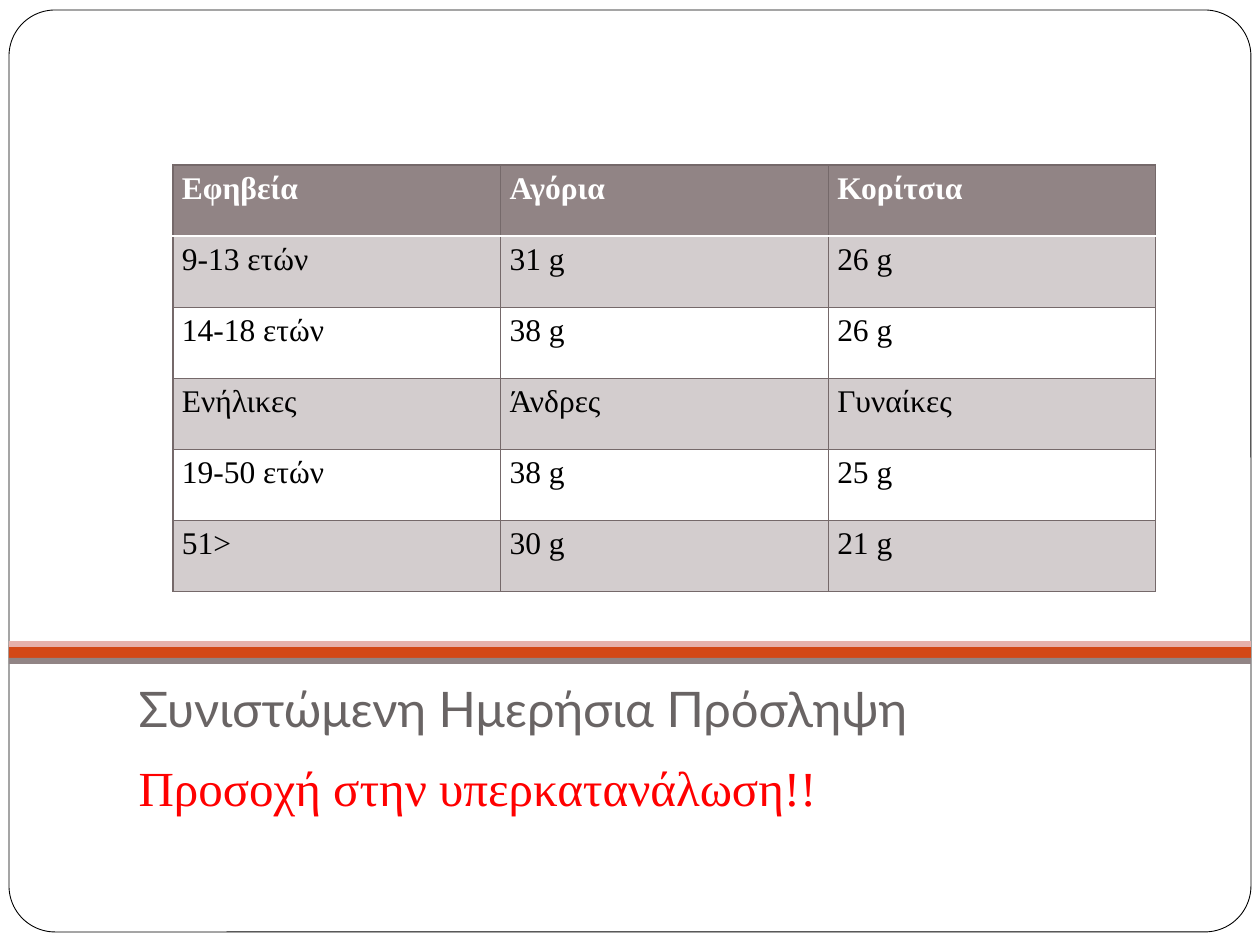
from lxml.etree import SubElement
from pptx import Presentation
from pptx.dml.color import RGBColor
from pptx.enum.shapes import MSO_SHAPE as Shape
from pptx.enum.text import MSO_ANCHOR as Anchor, MSO_AUTO_SIZE as AutoSize, PP_ALIGN as Align
from pptx.oxml import parse_xml
from pptx.oxml.ns import nsdecls, qn
from pptx.util import Pt

EMU_PER_PX = 914400 / 126
SERIF = "Times New Roman"
TAUPE = "918485"
GRID = "75696A"
INTAKE = [
    ("Εφηβεία", "Αγόρια", "Κορίτσια"),
    ("9-13 ετών", "31 g", "26 g"),
    ("14-18 ετών", "38 g", "26 g"),
    ("Ενήλικες", "Άνδρες", "Γυναίκες"),
    ("19-50 ετών", "38 g", "25 g"),
    ("51>", "30 g", "21 g"),
]


def px(length):
    """Turn pixels into EMU."""
    return round(length * EMU_PER_PX)


def color(hex_code):
    """Turn a hex string into a colour."""
    return RGBColor.from_string(hex_code)


def style_text(paragraph, size, font_name, hex_code, bold=False):
    """Align a paragraph left and format its runs."""
    paragraph.alignment = Align.LEFT
    for run in paragraph.runs:
        run.font.size = Pt(size)
        run.font.name = font_name
        run.font.bold = bold
        run.font.color.rgb = color(hex_code)


def add_panel(slide, preset, box, fill):
    """Add a flat filled shape without an outline."""
    panel = slide.shapes.add_shape(preset, *map(px, box))
    panel.shadow.inherit = False
    panel.fill.solid()
    panel.fill.fore_color.rgb = color(fill)
    panel.line.fill.background()
    return panel


def add_frame(slide, box):
    """Draw the rounded page frame and its three stripes."""
    left, top, width, height = box
    frame = add_panel(slide, Shape.ROUNDED_RECTANGLE, box, "FFFFFF")
    frame.adjustments[0] = 0.05
    frame.line.color.rgb = color("000000")
    frame.line.width = Pt(0.5)
    for offset, thickness, fill in [(635, 13, "D34817"), (631, 6, "E6B1AC"), (648, 6, TAUPE)]:
        add_panel(slide, Shape.RECTANGLE, (left, top + offset, width, thickness), fill)


def fill_placeholder(placeholder, box, text, font_name, hex_code):
    """Place a template placeholder in front and set its single line."""
    placeholder.left, placeholder.top, placeholder.width, placeholder.height = map(px, box)
    tree = placeholder.element.getparent()
    tree.append(placeholder.element)
    text_frame = placeholder.text_frame
    text_frame.text = text
    text_frame.word_wrap = True
    text_frame.auto_size = AutoSize.NONE
    style_text(text_frame.paragraphs[0], 28, font_name, hex_code)
    return text_frame


def add_caption(slide, box):
    """Set the title and the warning below it."""
    left, top, width, height = box
    heading = fill_placeholder(slide.shapes.title, (left, top, width, 72),
                               "Συνιστώμενη Ημερήσια Πρόσληψη", "Lato", "696464")
    heading.vertical_anchor = Anchor.MIDDLE
    heading.margin_bottom = px(13)
    warning = fill_placeholder(slide.placeholders[1], (left, top + 76, width, height - 76),
                               "Προσοχή στην υπερκατανάλωση!!", SERIF, "FF0000")
    warning.vertical_anchor = Anchor.TOP
    line = warning.paragraphs[0]
    line.space_before = Pt(5.8)
    properties = line._p.get_or_add_pPr()
    properties.set("marL", "0")
    properties.set("indent", "0")
    SubElement(properties, qn("a:buNone"))


def set_borders(cell, top, bottom):
    """Rule the four sides of a cell, each given as colour and points."""
    sides = {"lnL": (GRID, 0.75), "lnR": (GRID, 0.75), "lnT": top, "lnB": bottom}
    properties = cell._tc.get_or_add_tcPr()
    for position, (tag, (hex_code, points)) in enumerate(sides.items()):
        properties.insert(position, parse_xml(
            f'<a:{tag} {nsdecls("a")} w="{Pt(points)}"><a:solidFill>'
            f'<a:srgbClr val="{hex_code}"/></a:solidFill></a:{tag}>'))


def fill_cell(cell, row):
    """Fill the header solid, and odd rows with a translucent band."""
    if row and row % 2 == 0:
        cell.fill.background()
        return
    cell.fill.solid()
    cell.fill.fore_color.rgb = color(TAUPE)
    if row:
        tint = cell._tc.tcPr.find(f".//{qn('a:solidFill')}/{qn('a:srgbClr')}")
        SubElement(tint, qn("a:alpha")).set("val", "40000")


def add_intake_table(slide, box):
    """Add the table of daily intake by age and sex."""
    table = slide.shapes.add_table(len(INTAKE), len(INTAKE[0]), *map(px, box)).table
    rule, header_rule = (GRID, 0.75), ("FFFFFF", 1)
    for row, values in enumerate(INTAKE):
        for column, value in enumerate(values):
            cell = table.cell(row, column)
            cell.text = value
            cell.margin_left = cell.margin_right = px(9)
            cell.margin_top = cell.margin_bottom = px(6)
            style_text(cell.text_frame.paragraphs[0], 18, SERIF,
                       "000000" if row else "FFFFFF", bold=row == 0)
            fill_cell(cell, row)
            set_borders(cell, header_rule if row == 1 else rule,
                        header_rule if row == 0 else rule)


def main():
    """Build and save the slide."""
    presentation = Presentation()
    presentation.slide_width, presentation.slide_height = px(1260), px(945)
    slide = presentation.slides.add_slide(presentation.slide_layouts[1])
    add_frame(slide, (9, 10, 1242, 922))
    add_caption(slide, (126, 675, 1008, 170))
    add_intake_table(slide, (173, 165, 983, 427))
    presentation.save("out.pptx")


if __name__ == "__main__":
    main()
